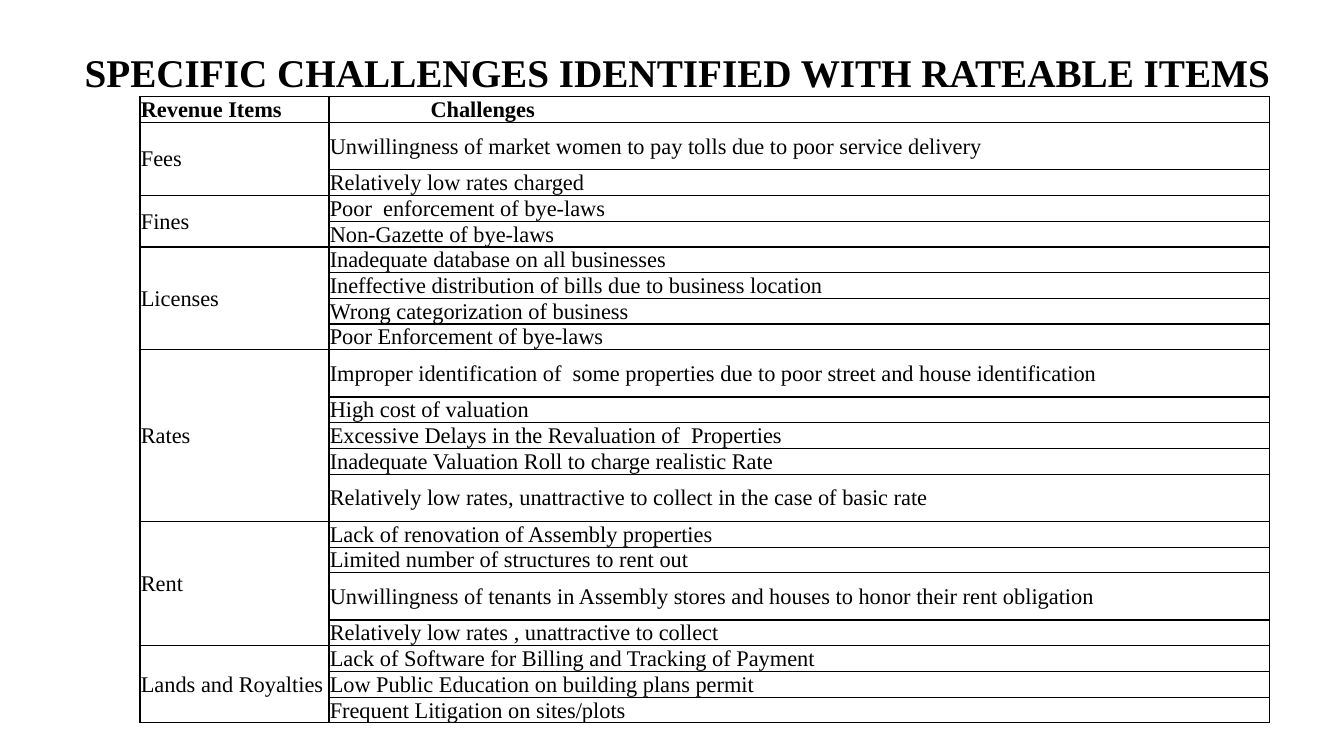
"""Build a slide with a table of challenges for each rateable revenue item."""
from dataclasses import dataclass

from lxml.etree import SubElement as Sub
from pptx import Presentation
from pptx.dml.color import RGBColor as Rgb
from pptx.enum.text import MSO_ANCHOR as Anchor, MSO_AUTO_SIZE as Auto, PP_ALIGN as Align
from pptx.oxml.ns import qn
from pptx.util import Cm, Pt

TITLE = "SPECIFIC CHALLENGES IDENTIFIED WITH RATEABLE ITEMS"
HEADS = ("Revenue Items", "Challenges")
ITEMS = {
    "Fees": [
        "Unwillingness of market women to pay tolls due to poor service delivery",
        "Relatively low rates charged",
    ],
    "Fines": ["Poor  enforcement of bye-laws", "Non-Gazette of bye-laws"],
    "Licenses": [
        "Inadequate database on all businesses",
        "Ineffective distribution of bills due to business location",
        "Wrong categorization of business",
        "Poor Enforcement of bye-laws",
    ],
    "Rates": [
        "Improper identification of  some properties due to poor street and house identification",
        "High cost of valuation",
        "Excessive Delays in the Revaluation of  Properties",
        "Inadequate Valuation Roll to charge realistic Rate",
        "Relatively low rates, unattractive to collect in the case of basic rate",
    ],
    "Rent": [
        "Lack of renovation of Assembly properties",
        "Limited number of structures to rent out",
        "Unwillingness of tenants in Assembly stores and houses to honor their rent obligation",
        "Relatively low rates , unattractive to collect",
    ],
    "Lands and Royalties": [
        "Lack of Software for Billing and Tracking of Payment",
        "Low Public Education on building plans permit",
        "Frequent Litigation on sites/plots",
    ],
}
JUSTIFIED = ("Rent", "Lands and Royalties")


@dataclass(frozen=True)
class Theme:
    """Hold the colours, font and sizes of the slide."""
    font: str = "Times New Roman"
    ink: str = "000000"
    head: int = 28
    body: int = 16
    rule: int = 1


LOOK = Theme()
WIDTHS = (Cm(4.76), Cm(23.71))
LOW, TALL = Cm(0.64), Cm(1.19)
LONG = 70
INDENT = Cm(2.54)


def write(para, text, size, bold=False):
    """Add one styled run to a paragraph."""
    run = para.add_run()
    run.text = text
    font = run.font
    font.name, font.size, font.bold = LOOK.font, Pt(size), bold
    font.color.rgb = Rgb.from_string(LOOK.ink)


def frame(cell):
    """Give a cell thin margins, four borders and no fill."""
    cell.margin_left = cell.margin_right = cell.margin_top = Cm(0.02)
    cell.margin_bottom = 0
    cell.vertical_anchor = Anchor.MIDDLE
    props = cell._tc.get_or_add_tcPr()
    for side in "LRTB":
        line = Sub(props, qn(f"a:ln{side}"), w=str(Pt(LOOK.rule)))
        fill = Sub(line, qn("a:solidFill"))
        Sub(fill, qn("a:srgbClr"), val=LOOK.ink)
    cell.fill.background()


def put(cell, text, bold=False, align=Align.LEFT):
    """Write text in a cell and return its paragraph."""
    para = cell.text_frame.paragraphs[0]
    para.alignment = align
    write(para, text, LOOK.body, bold)
    return para


def add_title(slide):
    """Place and fill the title."""
    title = slide.shapes.title
    title.left, title.top, title.width, title.height = Cm(1.88), Cm(0.81), Cm(30.45), Cm(2.16)
    box = title.text_frame
    box.word_wrap, box.auto_size = True, Auto.NONE
    box.vertical_anchor = Anchor.MIDDLE
    para = box.paragraphs[0]
    para.alignment, para.line_spacing = Align.LEFT, 0.9
    write(para, TITLE, LOOK.head, True)


def add_grid(slide):
    """Build the table, one merged label per revenue item."""
    lines = [text for group in ITEMS.values() for text in group]
    highs = [LOW] + [TALL if len(text) >= LONG else LOW for text in lines]
    shape = slide.shapes.add_table(len(highs), len(WIDTHS), Cm(3.53), Cm(2.44), sum(WIDTHS), sum(highs))
    table = shape.table
    table.first_row = table.horz_banding = False
    for col, width in zip(table.columns, WIDTHS):
        col.width = width
    for row, high in zip(table.rows, highs):
        row.height = high
    for cell in table.iter_cells():
        frame(cell)
    for col, text in enumerate(HEADS):
        para = put(table.cell(0, col), text, True)
    para._p.get_or_add_pPr().set("marL", str(INDENT))
    top = 1
    for item, group in ITEMS.items():
        label = table.cell(top, 0)
        label.merge(table.cell(top + len(group) - 1, 0))
        put(label, item)
        align = Align.JUSTIFY if item in JUSTIFIED else Align.LEFT
        for row, text in enumerate(group, top):
            put(table.cell(row, 1), text, align=align)
        top += len(group)


def main():
    """Make the slide and save it."""
    deck = Presentation()
    deck.slide_width, deck.slide_height = Cm(33.87), Cm(19.05)
    slide = deck.slides.add_slide(deck.slide_layouts[5])
    add_title(slide)
    add_grid(slide)
    deck.save("out.pptx")


if __name__ == "__main__":
    main()
